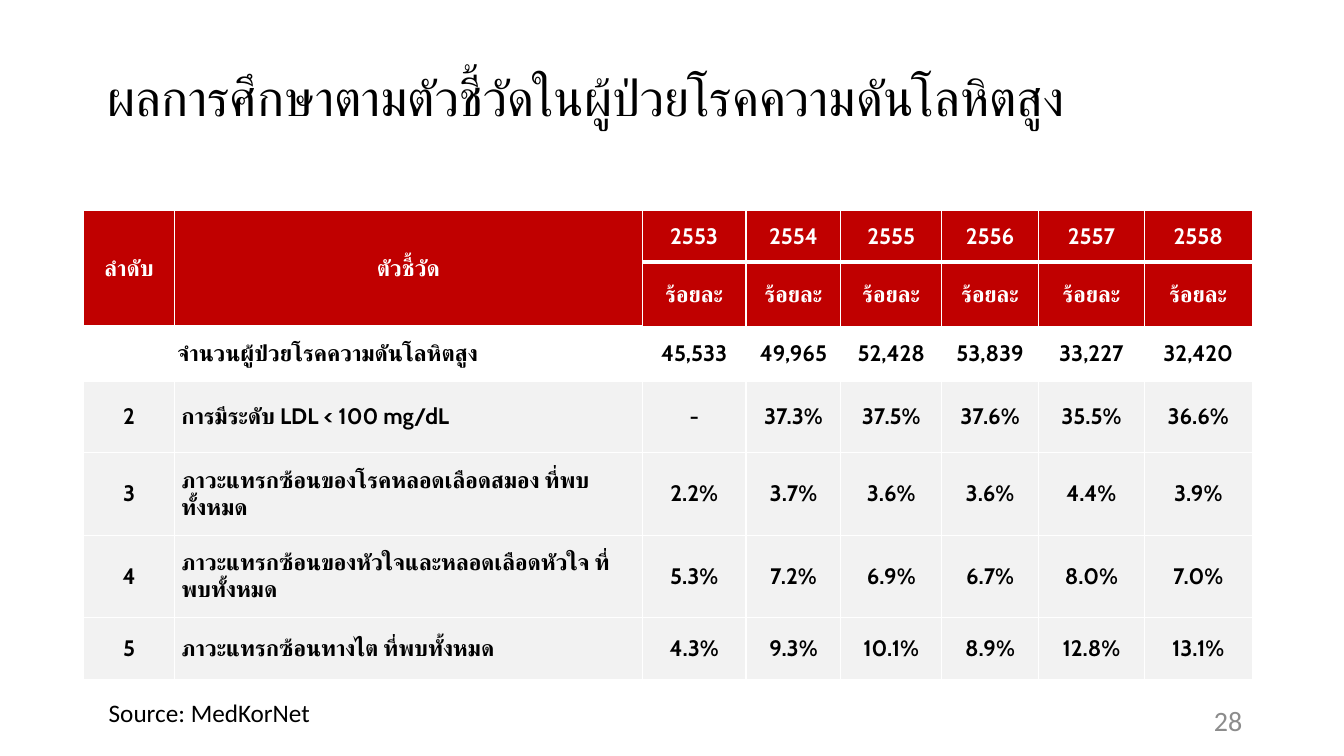
from dataclasses import dataclass

from lxml import etree
from pptx import Presentation, util as u
from pptx.dml.color import RGBColor
from pptx.enum import text
from pptx.oxml import ns

PX = 9144  # EMU in one px, 100 px to the inch


@dataclass(frozen=True)
class Theme:
    header: str = "C00000"
    band: str = "F2F2F2"
    white: str = "FFFFFF"
    ink: str = "000000"
    muted: str = "8C8C8C"
    main_font: str = "Cabin"
    note_font: str = "Calibri"
    title_size: int = 36
    table_size: int = 16
    source_size: int = 18
    number_size: int = 20
    space_before: int = 12


THEME = Theme()


@dataclass(frozen=True)
class Style:
    size: int
    font: str
    color: str
    bold: bool = False
    align: text.PP_ALIGN = text.PP_ALIGN.LEFT
    space_before: int = 0
    line_spacing: float = 1.0


@dataclass(frozen=True)
class Label:
    words: str
    left: int
    top: int
    width: int
    height: int
    style: Style
    anchor: text.MSO_ANCHOR = text.MSO_ANCHOR.MIDDLE


@dataclass(frozen=True)
class TableRow:
    height: int
    values: tuple[str, ...]
    fill: str
    color: str = THEME.ink
    label_margin: int = 3
    label_align: text.PP_ALIGN = text.PP_ALIGN.LEFT
    space_before: int = THEME.space_before
    bottom_border: int = 1


def header_row(height: int, values: tuple[str, ...], bottom_border: int = 1) -> TableRow:
    return TableRow(height, values, THEME.header, THEME.white,
                    label_align=text.PP_ALIGN.CENTER, bottom_border=bottom_border)


def indicator_row(height: int, *values: str) -> TableRow:
    return TableRow(height, values, THEME.band, label_margin=7)


YEARS = tuple(str(year) for year in range(2553, 2559))
TABLE_LEFT, TABLE_TOP = 83, 209
COLUMN_WIDTHS = (90, 464, 103, 94, 100, 96, 105, 107)
ROWS = (
    header_row(51, ("ลำดับ", "ตัวชี้วัด", *YEARS), bottom_border=3),
    header_row(64, ("", "", *("ร้อยละ" for _ in YEARS))),
    TableRow(54, ("", "จำนวนผู้ป่วยโรคความดันโลหิตสูง", "45,533", "49,965", "52,428",
                  "53,839", "33,227", "32,420"), THEME.white, space_before=0),
    indicator_row(71, "2", "การมีระดับ LDL < 100 mg/dL",
                  "-", "37.3%", "37.5%", "37.6%", "35.5%", "36.6%"),
    indicator_row(82, "3", "ภาวะแทรกซ้อนของโรคหลอดเลือดสมอง ที่พบทั้งหมด",
                  "2.2%", "3.7%", "3.6%", "3.6%", "4.4%", "3.9%"),
    indicator_row(82, "4", "ภาวะแทรกซ้อนของหัวใจและหลอดเลือดหัวใจ ที่พบทั้งหมด",
                  "5.3%", "7.2%", "6.9%", "6.7%", "8.0%", "7.0%"),
    indicator_row(61, "5", "ภาวะแทรกซ้อนทางไต ที่พบทั้งหมด",
                  "4.3%", "9.3%", "10.1%", "8.9%", "12.8%", "13.1%"),
)

LABELS = (
    Label("ผลการศึกษาตามตัวชี้วัดในผู้ป่วยโรคความดันโลหิตสูง", 97, 37, 1145, 125,
          Style(THEME.title_size, THEME.main_font, THEME.ink,
                space_before=THEME.space_before, line_spacing=0.9)),
    Label("28", 942, 695, 300, 40,
          Style(THEME.number_size, THEME.note_font, THEME.muted, align=text.PP_ALIGN.RIGHT)),
    Label("Source: MedKorNet", 98, 687, 256, 40,
          Style(THEME.source_size, THEME.note_font, THEME.ink), text.MSO_ANCHOR.TOP),
)


def write(frame, words: str, style: Style) -> None:
    paragraph = frame.paragraphs[0]
    paragraph.alignment = style.align
    paragraph.space_before = u.Pt(style.space_before)
    paragraph.line_spacing = style.line_spacing
    run = paragraph.add_run()
    run.text = words
    font = run.font
    font.size = u.Pt(style.size)
    font.bold = style.bold
    font.name = style.font
    font.color.rgb = RGBColor.from_string(style.color)
    # Thai letters take the complex-script typeface
    etree.SubElement(run._r.get_or_add_rPr(), ns.qn("a:cs"), typeface=style.font)


def add_label(slide, label: Label) -> None:
    box = slide.shapes.add_textbox(label.left * PX, label.top * PX,
                                   label.width * PX, label.height * PX)
    frame = box.text_frame
    frame.word_wrap = True
    frame.vertical_anchor = label.anchor
    write(frame, label.words, label.style)


def set_borders(cell, bottom: int) -> None:
    """Draw white cell borders; their XML must stand before the fill."""
    properties = cell._tc.get_or_add_tcPr()
    widths = {"a:lnL": 1, "a:lnR": 1, "a:lnT": 1, "a:lnB": bottom}
    for position, (tag, width) in enumerate(widths.items()):
        line = etree.Element(ns.qn(tag), w=str(u.Pt(width)))
        fill = etree.SubElement(line, ns.qn("a:solidFill"))
        etree.SubElement(fill, ns.qn("a:srgbClr"), val=THEME.white)
        properties.insert(position, line)


def fill_cell(cell, row: TableRow, column: int) -> None:
    cell.fill.solid()
    cell.fill.fore_color.rgb = RGBColor.from_string(row.fill)
    cell.vertical_anchor = text.MSO_ANCHOR.MIDDLE
    cell.margin_left = cell.margin_right = (row.label_margin if column < 2 else 3) * PX
    cell.margin_top = cell.margin_bottom = 0
    set_borders(cell, row.bottom_border)
    if row.values[column]:
        align = row.label_align if column == 1 else text.PP_ALIGN.CENTER
        write(cell.text_frame, row.values[column],
              Style(THEME.table_size, THEME.main_font, row.color, True, align,
                    row.space_before))


def add_indicator_table(slide) -> None:
    height = sum(row.height for row in ROWS)
    table = slide.shapes.add_table(len(ROWS), len(COLUMN_WIDTHS), TABLE_LEFT * PX,
                                   TABLE_TOP * PX, sum(COLUMN_WIDTHS) * PX,
                                   height * PX).table
    table.first_row = table.horz_banding = False
    for column, width in enumerate(COLUMN_WIDTHS):
        table.columns[column].width = width * PX
    for index, row in enumerate(ROWS):
        table.rows[index].height = row.height * PX
        for column in range(len(COLUMN_WIDTHS)):
            fill_cell(table.cell(index, column), row, column)
    for column in range(2):
        table.cell(0, column).merge(table.cell(1, column))


def main() -> None:
    presentation = Presentation()
    presentation.slide_width, presentation.slide_height = 1333 * PX, 750 * PX
    slide = presentation.slides.add_slide(presentation.slide_layouts[6])
    add_indicator_table(slide)
    for label in LABELS:
        add_label(slide, label)
    presentation.save("out.pptx")


if __name__ == "__main__":
    main()
